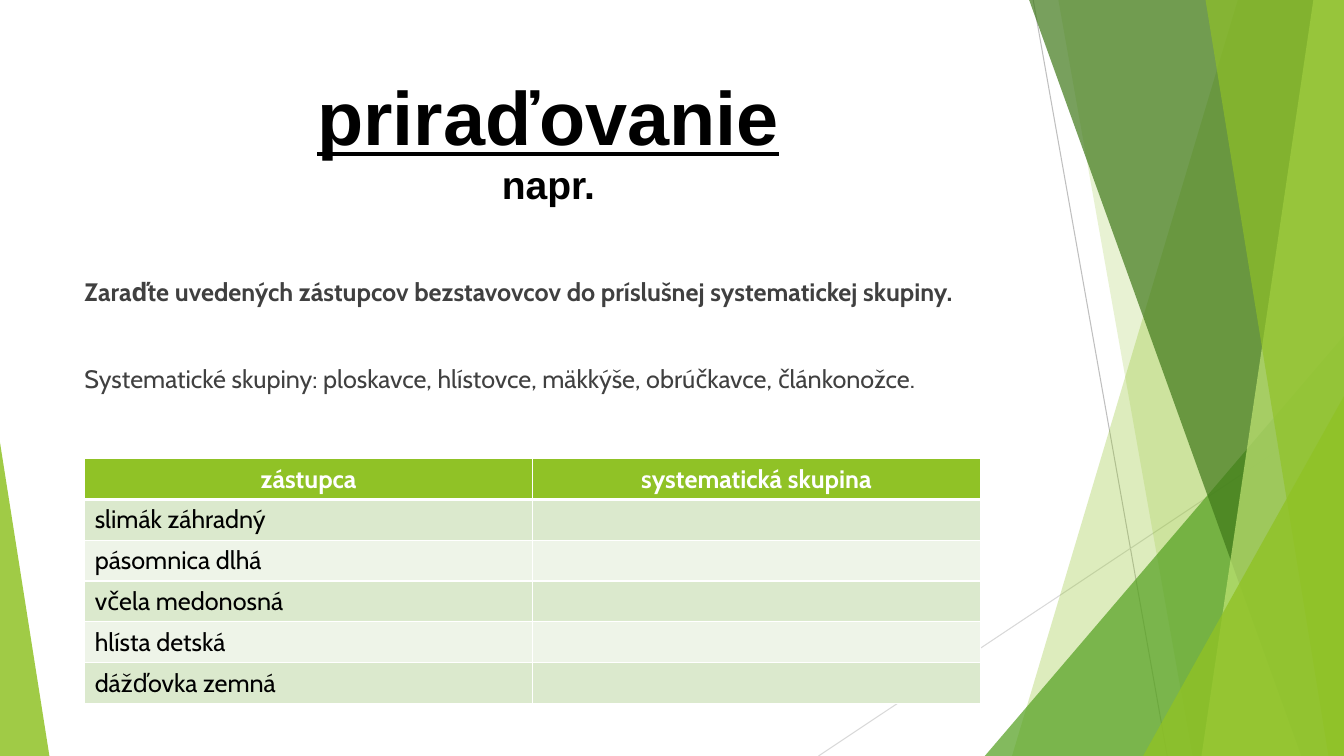
from lxml import etree
from pptx import Presentation
from pptx.dml.color import RGBColor
from pptx.enum.shapes import MSO_CONNECTOR, MSO_SHAPE
from pptx.enum.text import MSO_ANCHOR, PP_ALIGN
from pptx.oxml.ns import qn
from pptx.util import Pt

STRAIGHT, TRIANGLE = MSO_CONNECTOR.STRAIGHT, MSO_SHAPE.ISOSCELES_TRIANGLE
LEFT, CENTER = PP_ALIGN.LEFT, PP_ALIGN.CENTER
TOP, BOTTOM = MSO_ANCHOR.TOP, MSO_ANCHOR.BOTTOM

WHITE = RGBColor(0xFF, 0xFF, 0xFF)
BLACK = RGBColor(0, 0, 0)
DARK_GRAY = RGBColor(0x40, 0x40, 0x40)
MID_GRAY = RGBColor(0xBF, 0xBF, 0xBF)
LIGHT_GRAY = RGBColor(0xD9, 0xD9, 0xD9)
LIME = RGBColor(0x90, 0xC2, 0x26)
GREEN = RGBColor(0x54, 0xA0, 0x21)
FOREST = RGBColor(0x3F, 0x78, 0x19)
PALE_LIME = RGBColor(0xC0, 0xE4, 0x74)
BAND_DARK = RGBColor(0xDB, 0xE9, 0xCD)
BAND_LIGHT = RGBColor(0xEE, 0xF4, 0xE8)

# Content
TITLE, SUBTITLE = "priraďovanie", "napr."
TASK = "Zaraďte uvedených zástupcov bezstavovcov do príslušnej systematickej skupiny."
GROUPS = "Systematické skupiny: ploskavce, hlístovce, mäkkýše, obrúčkavce, článkonožce."
HEADERS = ["zástupca", "systematická skupina"]
ANIMALS = ["slimák záhradný", "pásomnica dlhá", "včela medonosná",
           "hlísta detská", "dážďovka zemná"]

# Decoration, back to front, in points
WIDTH, HEIGHT = 960, 540
LINES = [(738, 0, 833.76, HEIGHT, MID_GRAY),
         (WIDTH, 290.16, 584.64, HEIGHT, LIGHT_GRAY)]
# panel: x at top, x at bottom; triangle: left, top, width, apex position
DECORATION = [
    ("panel", (884.16, 722.88), LIME, 30),
    ("panel", (756, 851.76), LIME, 20),
    ("triangle", (703.44, 239.76, 256.56, 1), GREEN, 72),
    ("panel", (735.12, 929.52), FOREST, 70),
    ("panel", (938.16, 858.24), PALE_LIME, 70),
    ("panel", (861.12, 948.96), LIME, 65),
    ("triangle", (816.48, 282.96, 143.52, 1), LIME, 80),
    ("triangle", (0, 316.08, 35.28, 0), LIME, 85),
]
TEXT_LEFT, TEXT_WIDTH = 53.28, 676.8
TABLE_LEFT, TABLE_TOP, COLUMN_WIDTH, ROW_HEIGHT = 60.48, 327.6, 319.9, 29.16

presentation = Presentation()
presentation.slide_width, presentation.slide_height = Pt(WIDTH), Pt(HEIGHT)
slide = presentation.slides.add_slide(presentation.slide_layouts[6])
shapes = slide.shapes


def add_panel(top_x, bottom_x):
    builder = shapes.build_freeform(Pt(top_x), Pt(0))
    corners = [(WIDTH, 0), (WIDTH, HEIGHT), (bottom_x, HEIGHT)]
    builder.add_line_segments([(Pt(x), Pt(y)) for x, y in corners])
    return builder.convert_to_shape()


def add_triangle(left, top, width, apex):
    shape = shapes.add_shape(TRIANGLE, Pt(left), Pt(top), Pt(width), Pt(HEIGHT - top))
    shape.adjustments[0] = apex
    return shape


def add_run(paragraph, text, size, font, color, bold=False, underline=False):
    run = paragraph.add_run()
    run.text = text
    run.font.size, run.font.name = Pt(size), font
    run.font.bold, run.font.underline = bold, underline
    run.font.color.rgb = color


def add_text_frame(top, height, anchor):
    box = shapes.add_textbox(Pt(TEXT_LEFT), Pt(top), Pt(TEXT_WIDTH), Pt(height))
    box.text_frame.word_wrap = True
    box.text_frame.vertical_anchor = anchor
    return box.text_frame


def add_borders(cell, row):
    properties = cell._tc.get_or_add_tcPr()
    for side in "LRTB":
        thick = (row, side) in [(0, "B"), (1, "T")]
        line = etree.SubElement(properties, qn("a:ln" + side), w=str(Pt(3 if thick else 1)))
        fill = etree.SubElement(line, qn("a:solidFill"))
        etree.SubElement(fill, qn("a:srgbClr"), val=str(WHITE))


# Background lines and green shapes
for x1, y1, x2, y2, color in LINES:
    connector = shapes.add_connector(STRAIGHT, Pt(x1), Pt(y1), Pt(x2), Pt(y2))
    connector.line.color.rgb, connector.line.width = color, Pt(0.75)
    etree.SubElement(connector._element.spPr, qn("a:effectLst"))

BUILDERS = {"panel": add_panel, "triangle": add_triangle}
for kind, geometry, color, opacity in DECORATION:
    shape = BUILDERS[kind](*geometry)
    shape.shadow.inherit = False
    shape.line.fill.background()
    shape.fill.solid()
    shape.fill.fore_color.rgb = color
    color_element = shape._element.spPr.find(qn("a:solidFill"))[0]
    etree.SubElement(color_element, qn("a:alpha"), val=str(opacity * 1000))

# Title
paragraph = add_text_frame(48.24, 103.68, BOTTOM).paragraphs[0]
paragraph.alignment = CENTER
add_run(paragraph, TITLE, 54, "Arial", BLACK, bold=True, underline=True)
paragraph.add_line_break()
add_run(paragraph, SUBTITLE, 27.9, "Arial", BLACK, bold=True)

# Task
frame = add_text_frame(193.68, 120, TOP)
paragraph = frame.paragraphs[0]
paragraph.space_before = Pt(10)
add_run(paragraph, TASK, 18, "Cabin", DARK_GRAY, bold=True)
paragraph = frame.add_paragraph()
paragraph.space_before = Pt(41)
add_run(paragraph, GROUPS, 18, "Cabin", DARK_GRAY)

# Table
rows = [HEADERS] + [[animal, ""] for animal in ANIMALS]
table = shapes.add_table(len(rows), len(HEADERS), Pt(TABLE_LEFT), Pt(TABLE_TOP),
                         Pt(COLUMN_WIDTH * len(HEADERS)), Pt(ROW_HEIGHT * len(rows))).table
for column in table.columns:
    column.width = Pt(COLUMN_WIDTH)
for row, texts in enumerate(rows):
    table.rows[row].height = Pt(ROW_HEIGHT)
    header = row == 0
    for column, text in enumerate(texts):
        cell = table.cell(row, column)
        add_borders(cell, row)
        cell.fill.solid()
        cell.fill.fore_color.rgb = LIME if header else (BAND_LIGHT, BAND_DARK)[row % 2]
        paragraph = cell.text_frame.paragraphs[0]
        paragraph.alignment = CENTER if header else LEFT
        if text:
            add_run(paragraph, text, 18, "Cabin", WHITE if header else BLACK, bold=header)

presentation.save("out.pptx")
